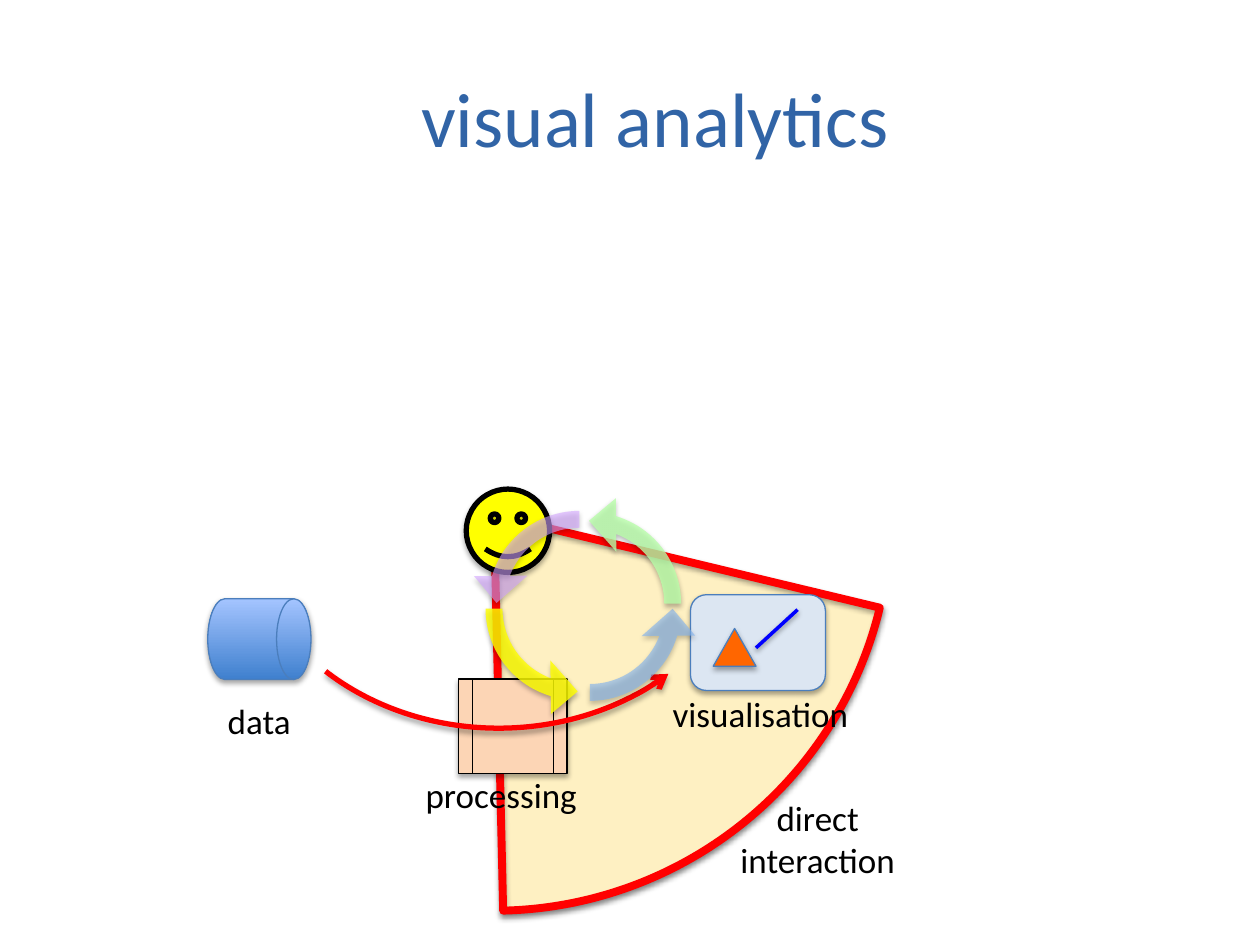
from lxml.etree import SubElement
from pptx import Presentation
from pptx.dml.color import RGBColor
from pptx.enum.shapes import MSO_CONNECTOR, MSO_SHAPE
from pptx.enum.text import MSO_ANCHOR, PP_ALIGN
from pptx.oxml.ns import qn
from pptx.util import Cm, Pt

COLOURS = {
    "title": "3164A6", "black": "000000", "outline": "4B7EBC", "red": "FF0000",
    "sector": "FEF0C2", "panel": "DCE6F2", "blue": "0000FF", "orange": "FF6600",
    "drum_dark": "3F80CE", "drum_light": "A4C4FF", "yellow": "FFFF00",
    "process": "FCD5B5", "sky": "82B3EF", "green": "B9FFAA", "violet": "D2A3FF",
}


def rgb(name):
    return RGBColor.from_string(COLOURS[name])


class Diagram:
    font = "Calibri"

    def __init__(self, slide):
        self.slide = slide

    def shadow(self, item, alpha=35, distance=1.8):
        props = item._element.spPr
        effects = props.find(qn("a:effectLst"))
        if effects is None:
            effects = SubElement(props, qn("a:effectLst"))
        outer = SubElement(effects, qn("a:outerShdw"), blurRad=str(Pt(3.1)),
                           dist=str(Pt(distance)), dir="5400000", rotWithShape="0")
        colour = SubElement(outer, qn("a:srgbClr"), val=COLOURS["black"])
        SubElement(colour, qn("a:alpha"), val=str(alpha * 1000))

    def shape(self, kind, box, fill=None, line="outline", width=0.75, adjust=(),
              flip=None, turn=0, opacity=100):
        item = self.slide.shapes.add_shape(kind, *map(Cm, box))
        for index, value in enumerate(adjust):
            item.adjustments[index] = value
        item.rotation = turn
        props = item._element.spPr
        if flip:
            props.find(qn("a:xfrm")).set(flip, "1")
        if isinstance(fill, tuple):
            item.fill.gradient()
            item.fill.gradient_angle = 90
            for stop, name in zip(item.fill.gradient_stops, fill):
                stop.color.rgb = rgb(name)
        elif fill:
            item.fill.solid()
            item.fill.fore_color.rgb = rgb(fill)
            if opacity < 100:
                colour = props.find(qn("a:solidFill")).find(qn("a:srgbClr"))
                SubElement(colour, qn("a:alpha"), val=str(opacity * 1000))
        else:
            item.fill.background()
        if line:
            item.line.color.rgb = rgb(line)
            item.line.width = Pt(width)
        else:
            item.line.fill.background()
        item.shadow.inherit = False
        self.shadow(item)
        return item

    def arrowhead(self, item):
        SubElement(item._element.spPr.find(qn("a:ln")), qn("a:tailEnd"), type="arrow")

    def line(self, start, end, colour, width):
        item = self.slide.shapes.add_connector(
            MSO_CONNECTOR.STRAIGHT, *map(Cm, start + end))
        item.line.color.rgb = rgb(colour)
        item.line.width = Pt(width)
        self.shadow(item, alpha=38, distance=1.6)

    def text(self, words, box, size=20, colour="black", align=PP_ALIGN.LEFT,
             anchor=MSO_ANCHOR.TOP):
        frame = self.slide.shapes.add_textbox(*map(Cm, box)).text_frame
        frame.word_wrap = True
        frame.vertical_anchor = anchor
        frame.text = words
        paragraph = frame.paragraphs[0]
        paragraph.alignment = align
        paragraph.font.name = self.font
        paragraph.font.size = Pt(size)
        paragraph.font.color.rgb = rgb(colour)


def main():
    deck = Presentation()
    deck.slide_width, deck.slide_height = Cm(25.4), Cm(19.05)
    diagram = Diagram(deck.slides.add_slide(deck.slide_layouts[6]))

    # Sector of direct interaction: filled, then outlined
    sector, sector_angles = (1.96, 2.41, 16, 15.95), (8.095, 53.205)
    diagram.shape(MSO_SHAPE.PIE, sector, "sector", adjust=sector_angles)
    diagram.shape(MSO_SHAPE.PIE, sector, line="red", width=4.5, adjust=sector_angles)
    diagram.text("direct\vinteraction", (14.48, 15.93, 4.01, 1.96),
                 align=PP_ALIGN.CENTER)

    # Visualisation panel
    diagram.shape(MSO_SHAPE.ROUNDED_RECTANGLE, (13.92, 11.99, 2.72, 1.93), "panel")
    diagram.line((16.08, 12.29), (15.24, 13.06), "blue", 2)
    diagram.shape(MSO_SHAPE.ISOSCELES_TRIANGLE, (14.38, 12.67, 0.86, 0.76), "orange")

    # Data store
    diagram.shape(MSO_SHAPE.FLOWCHART_DIRECT_ACCESS_STORAGE,
                  (4.19, 12.07, 2.08, 1.63), ("drum_dark", "drum_light"))
    diagram.text("data", (4.34, 13.97, 1.85, 1.12))
    diagram.text("visualisation", (13.31, 13.84, 4.57, 1.12))

    # User and title
    diagram.shape(MSO_SHAPE.SMILEY_FACE, (9.4, 9.86, 1.68, 1.68), "yellow",
                  line="black", width=3)
    diagram.text("visual analytics", (1.78, 0.76, 22.86, 3.18), 44, "title",
                 PP_ALIGN.CENTER, MSO_ANCHOR.MIDDLE)

    # Processing, with the flow from data to visualisation
    diagram.shape(MSO_SHAPE.FLOWCHART_PREDEFINED_PROCESS,
                  (9.25, 13.69, 2.18, 1.91), "process", line="black")
    diagram.text("processing", (8.33, 15.47, 3.94, 1.12))
    flow = diagram.shape(MSO_SHAPE.ARC, (4.9, 5.99, 10.31, 8.69), line="red", width=3,
                         adjust=(25.506, 81.872), flip="flipH")
    diagram.arrowhead(flow)

    # Interaction cycle
    for left, top, turn, colour, opacity in (
        (9.68, 10.08, 0, "sky", 63),
        (9.68, 9.96, 270, "green", 79),
        (9.47, 9.93, 180, "violet", 59),
        (9.42, 10.06, 90, "yellow", 81),
    ):
        diagram.shape(MSO_SHAPE.CIRCULAR_ARROW, (left, top, 4.42, 4.42), colour,
                      line=None, adjust=(0.077, 11.423, 204.925, 162.048, 0.122),
                      flip="flipV", turn=turn, opacity=opacity)

    deck.save("out.pptx")


if __name__ == "__main__":
    main()
